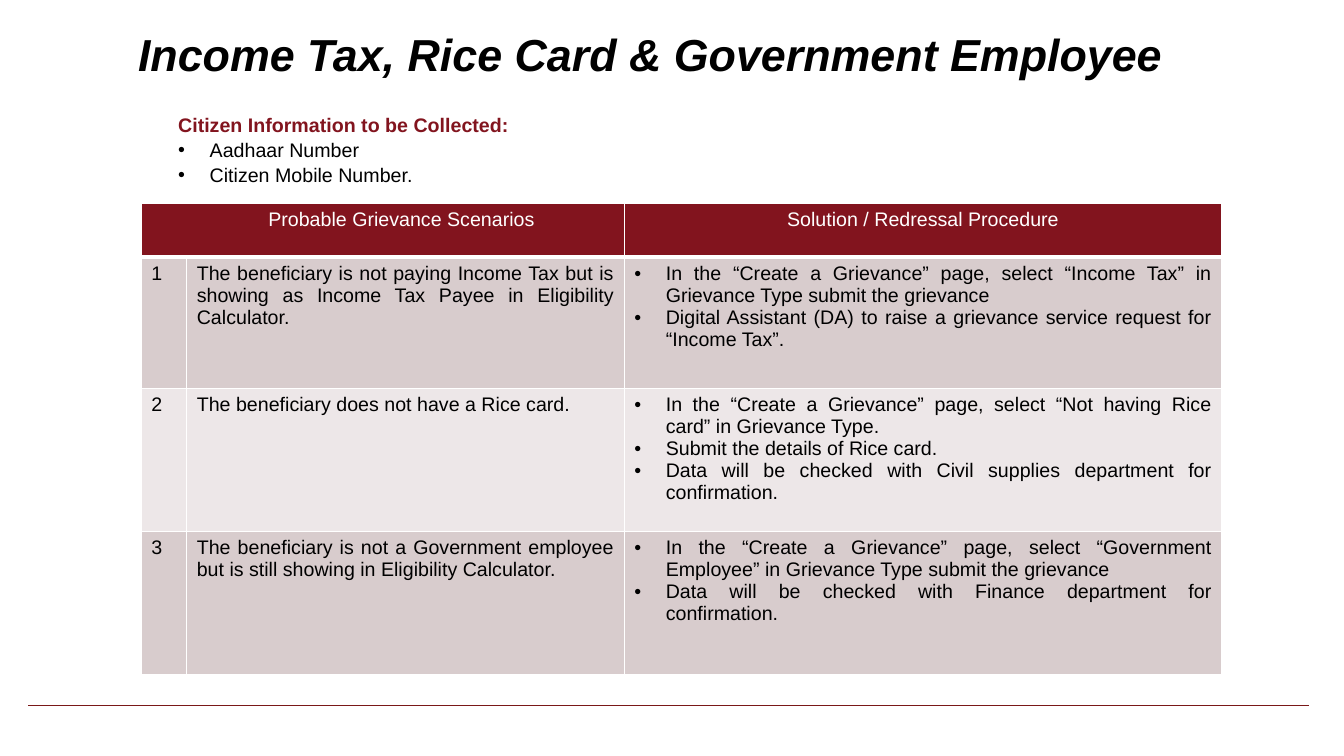
from dataclasses import dataclass

import pptx
import pptx.dml.color
import pptx.enum.shapes
import pptx.enum.text
import pptx.oxml
import pptx.oxml.ns
import pptx.util

Pt = pptx.util.Pt
RGBColor = pptx.dml.color.RGBColor
ALIGN = pptx.enum.text.PP_ALIGN
ANCHOR = pptx.enum.text.MSO_ANCHOR

MAROON = RGBColor(0x82, 0x14, 0x1E)
RULE_COLOR = RGBColor(0x7A, 0x18, 0x18)
BAND_DARK = RGBColor(0xD8, 0xCC, 0xCD)
BAND_LIGHT = RGBColor(0xED, 0xE7, 0xE8)
BLACK = RGBColor(0, 0, 0)
WHITE = RGBColor(0xFF, 0xFF, 0xFF)

BODY_FONT = {"name": "Arial", "size": Pt(14), "bold": False}
TITLE_FONT = {"name": "Arial", "size": Pt(32), "bold": True, "italic": True}
HEADING_FONT = {**BODY_FONT, "bold": True}
BULLET_INDENT = Pt(22.5)
COLUMN_WIDTHS = (32.4, 312.5, 427)
ROW_HEIGHTS = (38.2, 93.6, 102.2, 102.2)


@dataclass
class Line:
    text: str
    color: RGBColor = BLACK
    font: dict | None = None
    alignment: int | None = None
    bullet: bool = False


@dataclass
class Grievance:
    scenario: str
    steps: tuple[str, ...]


GRIEVANCES = (
    Grievance(
        "The beneficiary is not paying Income Tax but is showing as Income Tax Payee in Eligibility Calculator.",
        ("In the “Create a Grievance” page, select “Income Tax” in Grievance Type submit the grievance",
         "Digital Assistant (DA) to raise a grievance service request for “Income Tax”.")),
    Grievance(
        "The beneficiary does not have a Rice card.",
        ("In the “Create a Grievance” page, select “Not having Rice card” in Grievance Type.",
         "Submit the details of Rice card.",
         "Data will be checked with Civil supplies department for confirmation.")),
    Grievance(
        "The beneficiary is not a Government employee but is still showing in Eligibility Calculator.",
        ("In the “Create a Grievance” page, select “Government Employee” in Grievance Type submit the grievance",
         "Data will be checked with Finance department for confirmation.")),
)


def set_attributes(target, values: dict) -> None:
    for name, value in values.items():
        setattr(target, name, value)


def add_bullet(paragraph) -> None:
    properties = paragraph._p.get_or_add_pPr()
    properties.set("marL", str(BULLET_INDENT))
    properties.set("indent", str(-BULLET_INDENT))
    for tag, attribute, value in (("a:buFont", "typeface", "Arial"), ("a:buChar", "char", "•")):
        element = pptx.oxml.parse_xml(f'<{tag} {pptx.oxml.ns.nsdecls("a")} {attribute}="{value}"/>')
        properties.append(element)


def write_lines(text_frame, lines: list[Line], line_spacing: float | None = None) -> None:
    for index, line in enumerate(lines):
        paragraph = text_frame.add_paragraph() if index else text_frame.paragraphs[0]
        set_attributes(paragraph, {"alignment": line.alignment, "line_spacing": line_spacing})
        if line.bullet:
            add_bullet(paragraph)
        run = paragraph.add_run()
        run.text = line.text
        set_attributes(run.font, line.font or BODY_FONT)
        run.font.color.rgb = line.color


def add_text(slide, box: tuple[float, ...], lines: list[Line], frame_format: dict,
             line_spacing: float | None = None) -> None:
    shape = slide.shapes.add_textbox(*map(Pt, box))
    set_attributes(shape.text_frame, {"word_wrap": True, **frame_format})
    write_lines(shape.text_frame, lines, line_spacing)


def fill_cell(cell, lines: list[Line], fill: RGBColor, bottom_border: float = 1) -> None:
    write_lines(cell.text_frame, lines)
    cell.fill.solid()
    cell.fill.fore_color.rgb = fill
    properties = cell._tc.get_or_add_tcPr()
    for index, side in enumerate("LRTB"):
        width = Pt(bottom_border if side == "B" else 1)
        border = pptx.oxml.parse_xml(
            f'<a:ln{side} {pptx.oxml.ns.nsdecls("a")} w="{width}"><a:solidFill>'
            f'<a:srgbClr val="{WHITE}"/></a:solidFill></a:ln{side}>')
        properties.insert(index, border)


def add_grievance_table(slide) -> None:
    frame = slide.shapes.add_table(
        len(ROW_HEIGHTS), len(COLUMN_WIDTHS), Pt(101), Pt(145.5),
        Pt(sum(COLUMN_WIDTHS)), Pt(sum(ROW_HEIGHTS)))
    table = frame.table
    for column, width in zip(table.columns, COLUMN_WIDTHS):
        column.width = Pt(width)
    for row, height in zip(table.rows, ROW_HEIGHTS):
        row.height = Pt(height)

    # Header row, its first cell spanning the number column
    table.cell(0, 0).merge(table.cell(0, 1))
    table.cell(0, 0).margin_left = Pt(34)
    for column, heading in ((0, "Probable Grievance Scenarios"), (2, "Solution / Redressal Procedure")):
        fill_cell(table.cell(0, column), [Line(heading, WHITE, alignment=ALIGN.CENTER)], MAROON, 3)

    # Numbered grievances in alternating bands
    for number, grievance in enumerate(GRIEVANCES, start=1):
        fill = BAND_DARK if number % 2 else BAND_LIGHT
        contents = (
            [Line(str(number), alignment=ALIGN.JUSTIFY)],
            [Line(grievance.scenario, alignment=ALIGN.JUSTIFY)],
            [Line(step, alignment=ALIGN.JUSTIFY, bullet=True) for step in grievance.steps],
        )
        for column, lines in enumerate(contents):
            fill_cell(table.cell(number, column), lines, fill)


def add_footer_rule(slide) -> None:
    rule = slide.shapes.add_connector(
        pptx.enum.shapes.MSO_CONNECTOR.ELBOW, Pt(20.2), Pt(504), Pt(935.3), Pt(504))
    rule.line.color.rgb = RULE_COLOR
    rule.line.width = Pt(0.75)
    rule._element.spPr.append(pptx.oxml.parse_xml(f'<a:effectLst {pptx.oxml.ns.nsdecls("a")}/>'))


def main() -> None:
    presentation = pptx.Presentation()
    set_attributes(presentation, {"slide_width": Pt(960), "slide_height": Pt(540)})
    slide = presentation.slides.add_slide(presentation.slide_layouts[6])

    add_footer_rule(slide)

    # Title
    add_text(
        slide, (74.2, 27.4, 781.2, 49),
        [Line("Income Tax, Rice Card & Government Employee", font=TITLE_FONT, alignment=ALIGN.CENTER)],
        {"vertical_anchor": ANCHOR.BOTTOM, "margin_left": 0, "margin_right": 0,
         "margin_top": 0, "margin_bottom": Pt(18.7)})

    add_grievance_table(slide)

    # Information to collect
    add_text(
        slide, (120.2, 76.3, 639.4, 58.3),
        [Line("Citizen Information to be Collected:", MAROON, HEADING_FONT),
         Line("Aadhaar Number", bullet=True),
         Line("Citizen Mobile Number.", bullet=True)],
        {"auto_size": pptx.enum.text.MSO_AUTO_SIZE.SHAPE_TO_FIT_TEXT}, 1.06)

    presentation.save("out.pptx")


if __name__ == "__main__":
    main()
